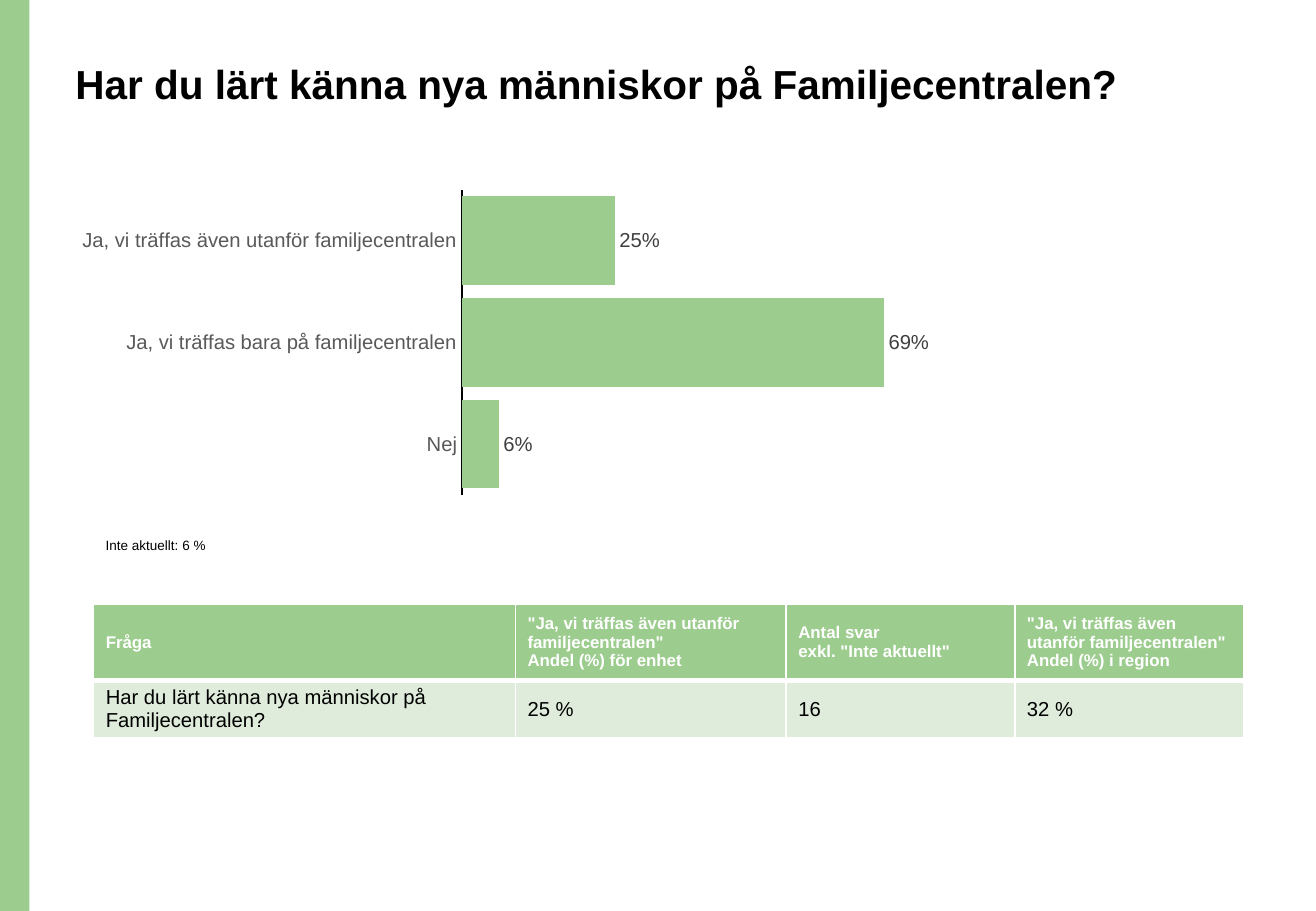
from lxml.etree import SubElement
from pptx import Presentation
from pptx.chart.data import CategoryChartData
from pptx.dml.color import RGBColor
from pptx.enum.chart import XL_CHART_TYPE as ChartType, XL_LABEL_POSITION as LabelPos, XL_TICK_MARK as Tick
from pptx.enum.shapes import MSO_SHAPE as Preset
from pptx.enum.text import MSO_ANCHOR as Anchor, PP_ALIGN as Align
from pptx.oxml import parse_xml
from pptx.oxml.ns import nsdecls, qn
from pptx.util import Pt

GREEN, PALE, WHITE, BLACK = "9DCC8F", "DFECDB", "FFFFFF", "000000"
QUESTION = "Har du lärt känna nya människor på Familjecentralen?"
SHARES = {
    "Ja, vi träffas även utanför familjecentralen": 0.25,
    "Ja, vi träffas bara på familjecentralen": 0.69,
    "Nej": 0.06,
}
FIRST_ANSWER = '"Ja, vi träffas även utanför familjecentralen"'
TABLE_ROWS = [
    ["Fråga", FIRST_ANSWER + "\nAndel (%) för enhet",
     'Antal svar\nexkl. "Inte aktuellt"', FIRST_ANSWER + "\nAndel (%) i region"],
    [QUESTION, "25 %", "16", "32 %"],
]
COLUMN_WIDTHS = [250, 160.5, 135.5, 135.5]
ROW_HEIGHTS = [45.4, 33]
ROW_STYLES = [
    dict(fill=GREEN, size=10, color=WHITE, bold=True, borders=dict(L=1, R=1, T=1, B=3)),
    dict(fill=PALE, size=12, color=BLACK, bold=False, borders=dict(L=1, R=1, T=3, B=1)),
]
PLOT_LAYOUT = dict(x=0.44, y=0.02, w=0.54, h=0.96)


def rgb(value):
    return RGBColor.from_string(value)


def paint(fill, color):
    fill.solid()
    fill.fore_color.rgb = rgb(color)


def set_font(font, size, color, bold=False):
    for name, value in dict(name="Arial", size=Pt(size), bold=bold).items():
        setattr(font, name, value)
    font.color.rgb = rgb(color)


def place(shape, box):
    for name, value in zip(("left", "top", "width", "height"), box):
        setattr(shape, name, Pt(value))


def add_side_band(slide, box):
    band = slide.shapes.add_shape(Preset.RECTANGLE, *map(Pt, box))
    band.shadow.inherit = False
    paint(band.fill, GREEN)
    band.line.fill.background()


def add_heading(slide, box):
    title = slide.shapes.title
    place(title, box)
    frame = title.text_frame
    frame.text = QUESTION
    frame.vertical_anchor = Anchor.TOP
    heading = frame.paragraphs[0]
    heading.alignment = Align.LEFT
    heading.line_spacing = 0.9
    set_font(heading.font, 24, BLACK, True)


def fix_plot_area(chart):
    """Pin the inner plot area to fractions of the chart."""
    plot_area = chart.element.find(".//" + qn("c:plotArea"))
    layout = plot_area.find(qn("c:layout"))
    if layout is None:
        layout = parse_xml(f"<c:layout {nsdecls('c')}/>")
        plot_area.insert(0, layout)
    manual = SubElement(layout, qn("c:manualLayout"))
    settings = dict(layoutTarget="inner", xMode="edge", yMode="edge", **PLOT_LAYOUT)
    for tag, value in settings.items():
        SubElement(manual, qn("c:" + tag)).set("val", str(value))


def add_answer_chart(slide, box):
    answers = CategoryChartData(number_format="0%")
    answers.categories = list(SHARES)
    answers.add_series("Series 1", list(SHARES.values()))
    chart = slide.shapes.add_chart(ChartType.BAR_CLUSTERED, *map(Pt, box), answers).chart
    chart.has_legend = chart.has_title = False
    set_font(chart.font, 10, BLACK)
    fix_plot_area(chart)

    answer_axis, share_axis = chart.category_axis, chart.value_axis
    answer_axis.reverse_order = True
    answer_axis.major_tick_mark = answer_axis.minor_tick_mark = Tick.NONE
    answer_axis.format.line.color.rgb = rgb(BLACK)
    answer_axis.format.line.width = Pt(0.75)
    set_font(answer_axis.tick_labels.font, 12, "595959")
    share_axis.minimum_scale, share_axis.maximum_scale = 0, 0.8
    share_axis.has_major_gridlines = share_axis.visible = False

    bars = chart.plots[0]
    bars.gap_width = 15
    bars.vary_by_categories = False
    paint(bars.series[0].format.fill, GREEN)
    labels = bars.series[0].data_labels
    formats = dict(show_value=True, position=LabelPos.OUTSIDE_END,
                   number_format="0%", number_format_is_linked=False)
    for name, value in formats.items():
        setattr(labels, name, value)
    set_font(labels.font, 12, "404040")


def add_note(slide, box):
    frame = slide.shapes.add_textbox(*map(Pt, box)).text_frame
    frame.word_wrap = True
    frame.text = "Inte aktuellt: 6 %"
    note = frame.paragraphs[0]
    note.line_spacing = 1.5
    set_font(note.font, 8, BLACK)


def add_borders(cell, widths):
    properties = cell._tc.get_or_add_tcPr()
    for position, (side, width) in enumerate(widths.items()):
        properties.insert(position, parse_xml(
            f'<a:ln{side} {nsdecls("a")} w="{Pt(width)}"><a:solidFill>'
            f'<a:srgbClr val="{WHITE}"/></a:solidFill></a:ln{side}>'))


def fill_cell(cell, text, style):
    cell.text = text
    cell.vertical_anchor = Anchor.MIDDLE
    cell.margin_top = cell.margin_bottom = Pt(2.5)
    for paragraph in cell.text_frame.paragraphs:
        set_font(paragraph.font, style["size"], style["color"], style["bold"])
    paint(cell.fill, style["fill"])
    add_borders(cell, style["borders"])


def add_result_table(slide, left, top):
    box = (left, top, sum(COLUMN_WIDTHS), sum(ROW_HEIGHTS))
    table = slide.shapes.add_table(len(TABLE_ROWS), len(COLUMN_WIDTHS), *map(Pt, box)).table
    for column, width in zip(table.columns, COLUMN_WIDTHS):
        column.width = Pt(width)
    for row, height, texts, style in zip(table.rows, ROW_HEIGHTS, TABLE_ROWS, ROW_STYLES):
        row.height = Pt(height)
        for cell, text in zip(row.cells, texts):
            fill_cell(cell, text, style)


def main():
    deck = Presentation()
    deck.slide_width, deck.slide_height = Pt(780), Pt(540)
    slide = deck.slides.add_slide(deck.slide_layouts[5])
    add_side_band(slide, (0, 0, 17.5, 540))
    add_heading(slide, (37.5, 34.5, 672.5, 73.5))
    add_answer_chart(slide, (37.5, 108.7, 537, 188.6))
    add_note(slide, (55.5, 310.3, 151, 20))
    add_result_table(slide, 55.5, 358)
    deck.save("out.pptx")


if __name__ == "__main__":
    main()
